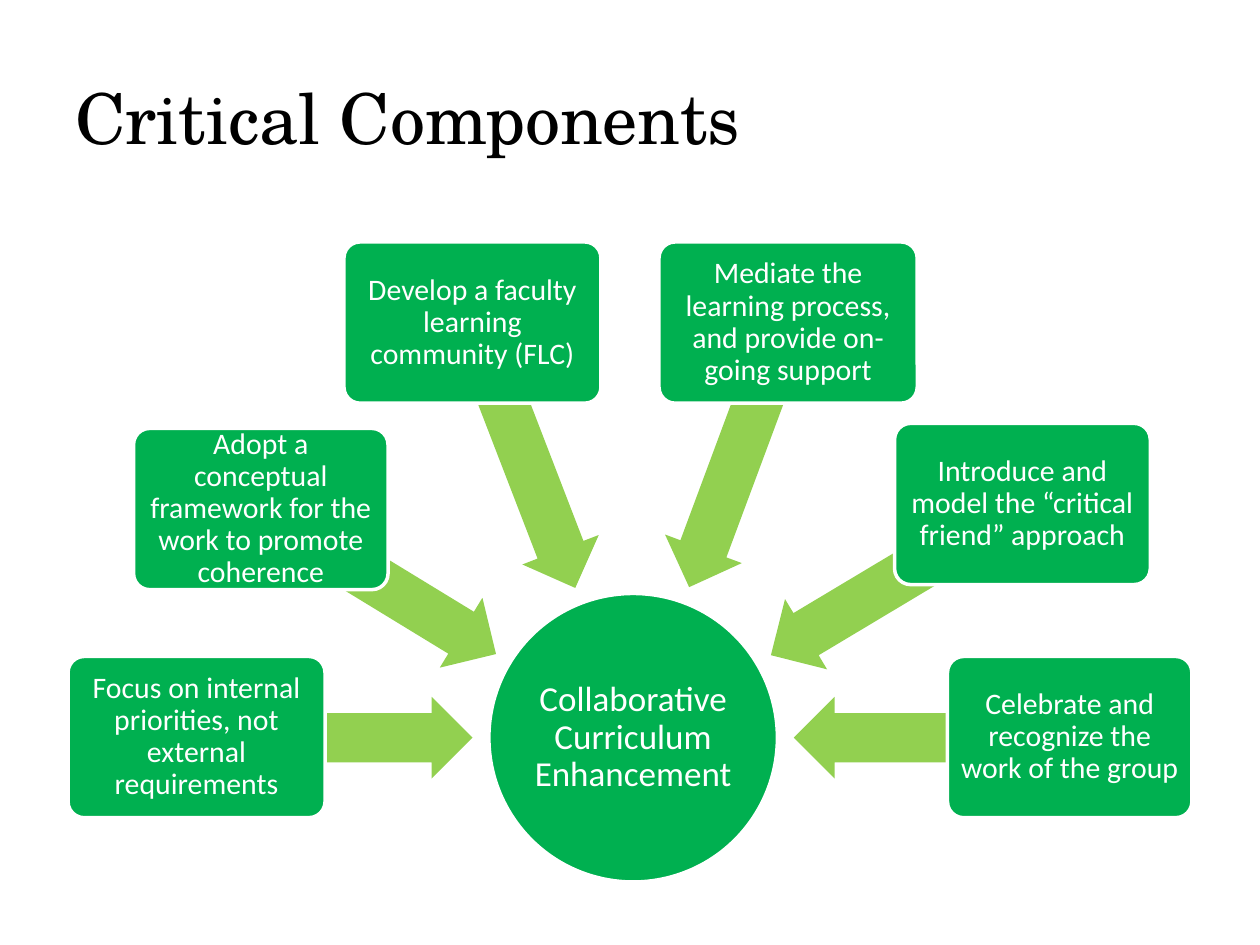
from math import cos, radians, sin

from pptx import Presentation
from pptx.dml.color import RGBColor
from pptx.enum.shapes import MSO_SHAPE as Shape
from pptx.enum.text import MSO_ANCHOR as Anchor, PP_ALIGN as Align
from pptx.util import Inches, Pt

COLORS = {"green": "00B050", "lime": "92D050", "white": "FFFFFF", "black": "000000"}
HUB_X, HUB_Y, HUB_SIZE = 5.025, 5.855, 2.29
TIP_RADIUS, ARROW_HEIGHT, CARD_HEIGHT = 1.275, 0.65, 1.28

# Each component: text, card left, card top, card width, arrow angle, arrow length
COMPONENTS = [
    ("Focus on internal priorities, not external requirements", 0.54, 5.21, 2.04, 180, 2.19),
    ("Adopt a conceptual framework for the work to promote coherence", 1.06, 3.4, 2.02, 211.4, 2.2),
    ("Develop a faculty learning community (FLC)", 2.73, 1.92, 2.04, 248.9, 2.26),
    ("Mediate the learning process, and provide on-going support", 5.23, 1.92, 2.05, 290.4, 2.24),
    ("Introduce and model the “critical friend” approach", 7.1, 3.36, 2.03, 329.1, 2.32),
    ("Celebrate and recognize the work of the group", 7.52, 5.21, 1.94, 0, 2.19),
]


def color(name):
    """Return the named colour."""
    return RGBColor.from_string(COLORS[name])


def write(frame, text, size, font, ink):
    """Write one middle-anchored paragraph and return it."""
    frame.word_wrap = True
    frame.vertical_anchor = Anchor.MIDDLE
    para = frame.paragraphs[0]
    span = para.add_run()
    span.text = text
    span.font.size = Pt(size)
    span.font.name = font
    span.font.color.rgb = color(ink)
    return para


def add_filled(page, kind, left, top, width, height, fill):
    """Add a flat preset shape without an outline."""
    shape = page.shapes.add_shape(kind, Inches(left), Inches(top), Inches(width), Inches(height))
    shape.shadow.inherit = False
    shape.fill.solid()
    shape.fill.fore_color.rgb = color(fill)
    shape.line.fill.background()
    return shape


def add_node(page, kind, left, top, width, height, text, size, inset):
    """Add a white-edged green shape with centred text."""
    node = add_filled(page, kind, left, top, width, height, "green")
    node.line.color.rgb = color("white")
    node.line.width = Pt(2)
    frame = node.text_frame
    frame.margin_left = frame.margin_right = Inches(inset)
    frame.margin_top = frame.margin_bottom = Inches(inset)
    para = write(frame, text, size, "Calibri", "white")
    para.alignment = Align.CENTER
    para.line_spacing = 0.9
    return node


def add_title(page, left, top, width, height):
    """Add the slide title."""
    box = page.shapes.add_textbox(Inches(left), Inches(top), Inches(width), Inches(height))
    write(box.text_frame, "Critical Components", 40, "TeX Gyre Schola", "black")


def add_arrow(page, angle, length):
    """Add an arrow that points at the hub from the given angle."""
    reach = TIP_RADIUS + length / 2
    left = HUB_X + reach * cos(radians(angle)) - length / 2
    top = HUB_Y + reach * sin(radians(angle)) - ARROW_HEIGHT / 2
    arrow = add_filled(page, Shape.LEFT_ARROW, left, top, length, ARROW_HEIGHT, "lime")
    arrow.adjustments[0] = 0.6
    arrow.adjustments[1] = 0.5
    arrow.rotation = angle


def add_radial(page):
    """Add the hub and the components around it."""
    add_node(page, Shape.OVAL, HUB_X - HUB_SIZE / 2, HUB_Y - HUB_SIZE / 2, HUB_SIZE, HUB_SIZE,
             "Collaborative Curriculum Enhancement", 20, 0.01)
    for text, left, top, width, angle, length in COMPONENTS:
        add_arrow(page, angle, length)
        card = add_node(page, Shape.ROUNDED_RECTANGLE, left, top, width, CARD_HEIGHT,
                        text, 17, 0.04)
        card.adjustments[0] = 0.1


def main():
    """Build and save the slide."""
    deck = Presentation()
    deck.slide_width, deck.slide_height = Inches(10), Inches(7.5)
    page = deck.slides.add_slide(deck.slide_layouts[6])
    add_title(page, 0.5, 0.3, 9, 1.25)
    add_radial(page)
    deck.save("out.pptx")


if __name__ == "__main__":
    main()
